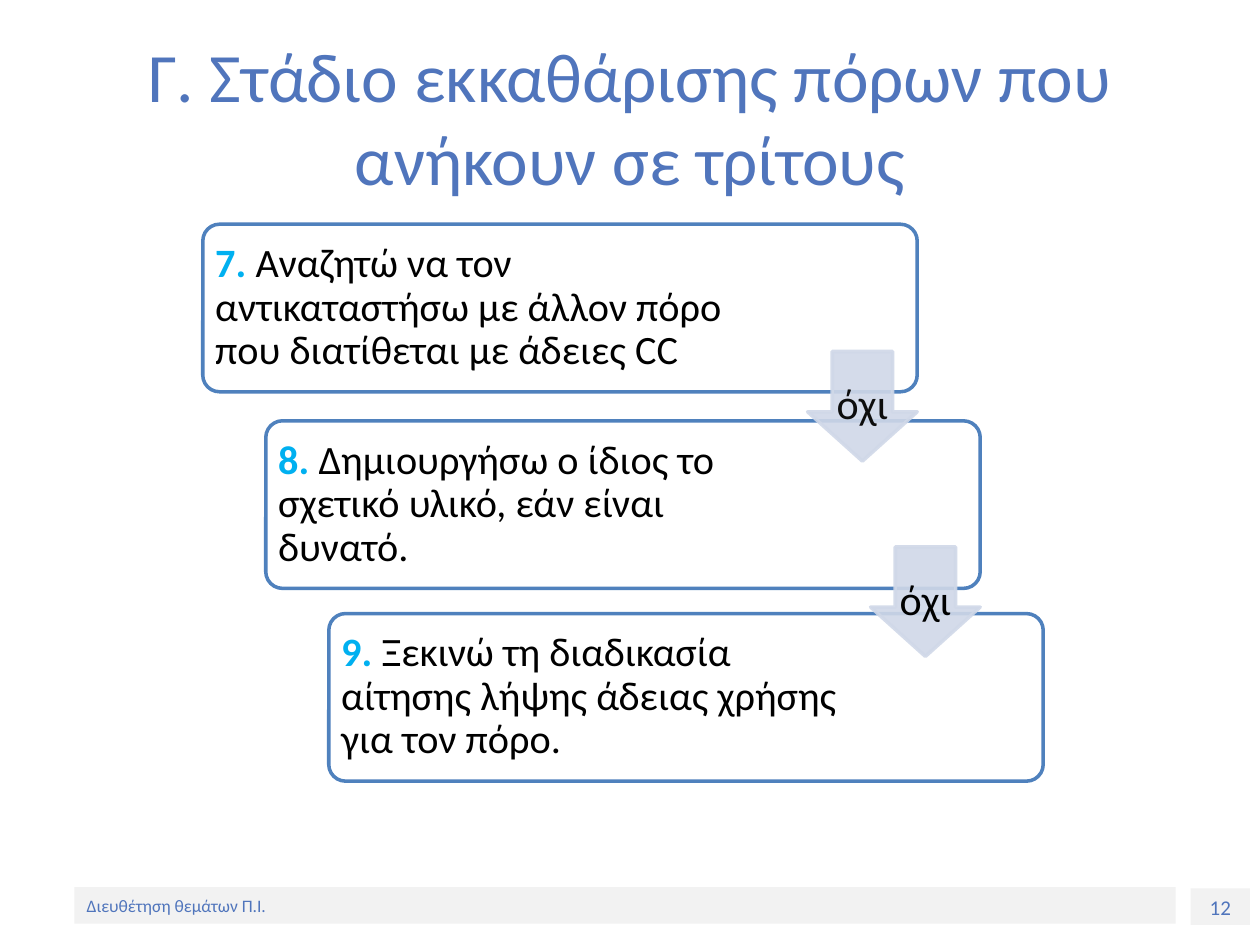
"""Build the slide on clearing third-party resources: three steps joined by arrows."""
from dataclasses import dataclass

from lxml import etree
from pptx import Presentation
from pptx.dml.color import RGBColor
from pptx.enum import shapes, text
from pptx.oxml import ns
from pptx.util import Inches, Pt

FONT = "Calibri"
BLUE = "5075BC"
BORDER = "4F81BD"
ARROW = "D0D8E8"
GREY = "F2F2F2"
BLACK = "000000"
STEP_WIDTH, STEP_HEIGHT, STEP_TEXT_WIDTH = 5.67, 1.33, 4.3
ARROW_SIZE = 0.87
INDENT = 0.5


@dataclass
class Box:
    left: float
    top: float
    width: float
    height: float

    def lengths(self) -> list:
        return [Inches(v) for v in (self.left, self.top, self.width, self.height)]


@dataclass
class Step:
    number: str
    wording: str
    top: float


@dataclass
class Answer:
    top: float
    color: str


@dataclass
class Footer:
    wording: str
    box: Box
    size: float
    align: text.PP_ALIGN
    anchor: text.MSO_ANCHOR


STEPS = [
    Step("7. ", "Αναζητώ να τον αντικαταστήσω με άλλον πόρο που διατίθεται με άδειες CC", 1.78),
    Step("8. ", "Δημιουργήσω ο ίδιος το σχετικό υλικό, εάν είναι δυνατό.", 3.34),
    Step("9. ", "Ξεκινώ τη διαδικασία αίτησης λήψης άδειας χρήσης για τον πόρο.", 4.87),
]
ANSWERS = [Answer(2.79, "0D0D0D"), Answer(4.34, BLACK)]
FOOTERS = [
    Footer("12", Box(9.45, 7.05, 0.47, 0.29), 12, text.PP_ALIGN.CENTER, text.MSO_ANCHOR.TOP),
    Footer("Διευθέτηση θεμάτων Π.Ι.", Box(0.59, 7.04, 8.74, 0.29), 10,
           text.PP_ALIGN.LEFT, text.MSO_ANCHOR.MIDDLE),
]


def rgb(color: str) -> RGBColor:
    return RGBColor.from_string(color)


def style_font(font, size: float, color: str | None = None) -> None:
    font.name, font.size = FONT, Pt(size)
    if color:
        font.color.rgb = rgb(color)


def add_outline(slide, kind, box: Box, fill: str | None = None, line: str | None = None):
    shape = slide.shapes.add_shape(kind, *box.lengths())
    shape.shadow.inherit = False
    if fill:
        shape.fill.solid()
        shape.fill.fore_color.rgb = rgb(fill)
    else:
        shape.fill.background()
    if line:
        shape.line.color.rgb = rgb(line)
        shape.line.width = Pt(2)
    else:
        shape.line.fill.background()
    return shape


def add_label(slide, box: Box, inset: float):
    frame = slide.shapes.add_textbox(*box.lengths()).text_frame
    frame.word_wrap = True
    frame.vertical_anchor = text.MSO_ANCHOR.MIDDLE
    frame.margin_left = frame.margin_right = Inches(inset)
    frame.margin_top = frame.margin_bottom = Inches(inset)
    paragraph = frame.paragraphs[0]
    paragraph.line_spacing = 0.9
    return paragraph


def add_title(slide, wording: str) -> None:
    title = slide.shapes.title
    title.left, title.top, title.width, title.height = Box(0.5, 0.3, 9, 1.25).lengths()
    frame = title.text_frame
    frame.text = wording
    frame.auto_size = text.MSO_AUTO_SIZE.NONE
    frame.vertical_anchor = text.MSO_ANCHOR.MIDDLE
    frame.paragraphs[0].alignment = text.PP_ALIGN.CENTER
    style_font(frame.paragraphs[0].font, 39.6, BLUE)


def add_footer(slide, footer: Footer) -> None:
    frame = add_outline(slide, shapes.MSO_SHAPE.RECTANGLE, footer.box, fill=GREY).text_frame
    frame.text = footer.wording
    frame.vertical_anchor = footer.anchor
    frame.paragraphs[0].alignment = footer.align
    style_font(frame.paragraphs[0].font, footer.size, BLUE)


def add_step(slide, step: Step, left: float) -> None:
    border = add_outline(slide, shapes.MSO_SHAPE.ROUNDED_RECTANGLE,
                         Box(left, step.top, STEP_WIDTH, STEP_HEIGHT), line=BORDER)
    border.adjustments[0] = 0.1
    paragraph = add_label(slide, Box(left, step.top, STEP_TEXT_WIDTH, STEP_HEIGHT), 0.1)
    style_font(paragraph.font, 23)
    for wording, color, bold in ((step.number, "00B0F0", True), (step.wording, BLACK, False)):
        run = paragraph.add_run()
        run.text = wording
        run.font.bold = bold
        run.font.color.rgb = rgb(color)


def add_answer(slide, answer: Answer, left: float) -> None:
    box = Box(left, answer.top, ARROW_SIZE, ARROW_SIZE)
    arrow = add_outline(slide, shapes.MSO_SHAPE.DOWN_ARROW, box, fill=ARROW, line=ARROW)
    arrow.adjustments[0], arrow.adjustments[1] = 0.45, 0.55
    arrow.adjustments[0], arrow.adjustments[1] = 0.55, 0.45
    for color in arrow.element.spPr.iter(ns.qn("a:srgbClr")):
        etree.SubElement(color, ns.qn("a:alpha"), val="90000")
    paragraph = add_label(slide, box, 0.03)
    paragraph.text = "όχι"
    paragraph.alignment = text.PP_ALIGN.CENTER
    style_font(paragraph.font, 24, answer.color)


def main() -> None:
    deck = Presentation()
    deck.slide_width, deck.slide_height = Inches(10), Inches(7.5)
    slide = deck.slides.add_slide(deck.slide_layouts[5])
    for footer in FOOTERS:
        add_footer(slide, footer)
    add_title(slide, "Γ. Στάδιο εκκαθάρισης πόρων που ανήκουν σε τρίτους")
    for index, step in enumerate(STEPS):
        add_step(slide, step, 1.61 + INDENT * index)
    for index, answer in enumerate(ANSWERS):
        add_answer(slide, answer, 6.41 + INDENT * index)
    deck.save("out.pptx")


if __name__ == "__main__":
    main()
